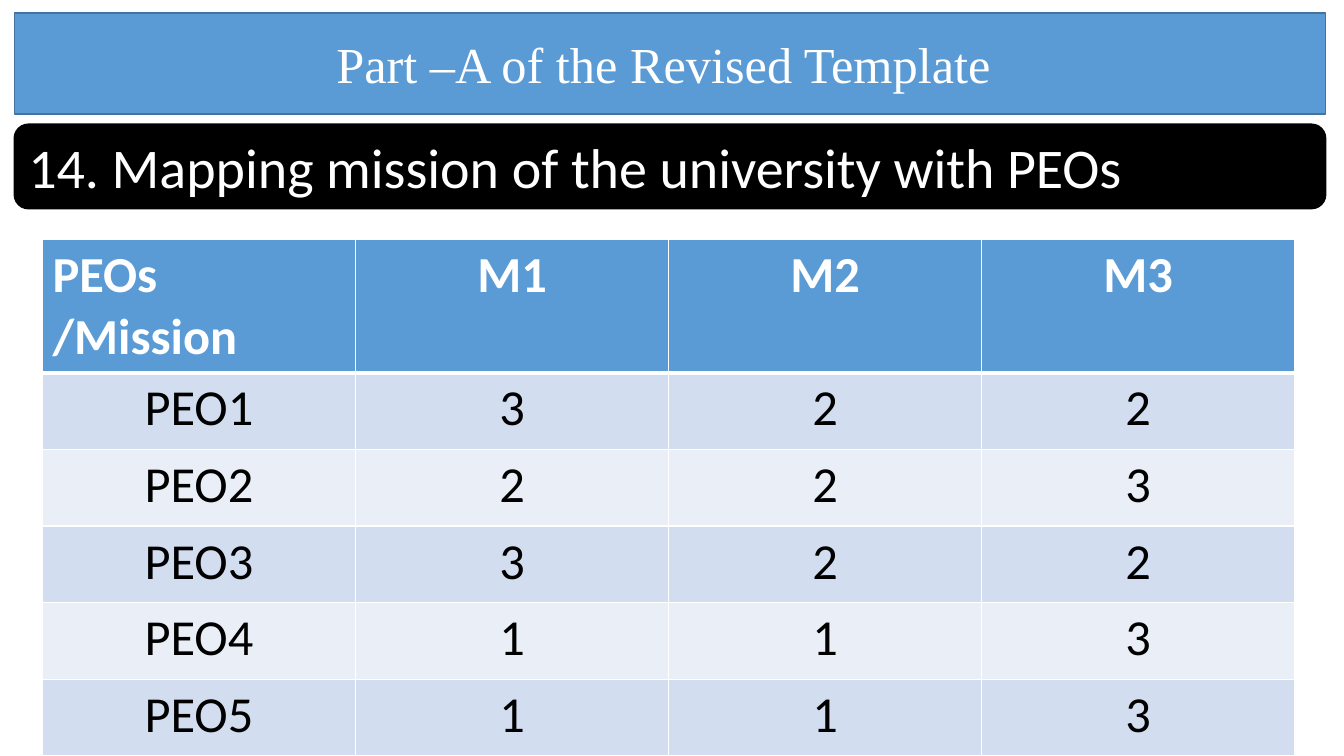
import pptx
import pptx.util
import pptx.dml.color
import pptx.enum.shapes
import pptx.enum.text
import pptx.oxml
import pptx.oxml.ns

Cm, Pt = pptx.util.Cm, pptx.util.Pt
RGB = pptx.dml.color.RGBColor
ALIGN = pptx.enum.text.PP_ALIGN

# Content
TITLE = "Part –A of the Revised Template "
TOPIC = "14. Mapping mission of the university with PEOs"
ROWS = [
    ("PEOs /Mission", "M1", "M2", "M3"),
    ("PEO1", "3", "2", "2"),
    ("PEO2", "2", "2", "3"),
    ("PEO3", "3", "2", "2"),
    ("PEO4", "1", "1", "3"),
    ("PEO5", "1", "1", "3"),
]

# Colours
BLUE = RGB(0x5B, 0x9B, 0xD5)
EDGE = RGB(0x43, 0x73, 0x9E)
BLACK = RGB(0, 0, 0)
WHITE = RGB(255, 255, 255)
BANDS = [RGB(0xEA, 0xEF, 0xF7), RGB(0xD2, 0xDE, 0xEF)]

# Layout
LEFT, WIDE = Cm(0.36), Cm(33.05)
HEAD, ROW, COL = Cm(3.1), Cm(1.93), Cm(7.89)


def place(shape, top, height):
    shape.left, shape.top = LEFT, top
    shape.width, shape.height = WIDE, height


def style(para, size, font, color, align, bold=False):
    para.alignment = align
    para.font.size = Pt(size)
    para.font.name = font
    para.font.color.rgb = color
    para.font.bold = bold


def paint(shape, fill, line, text, size, font, align):
    shape.fill.solid()
    shape.fill.fore_color.rgb = fill
    shape.line.color.rgb = line
    shape.line.width = Pt(1)
    frame = shape.text_frame
    frame.text = text
    frame.word_wrap = True
    frame.auto_size = pptx.enum.text.MSO_AUTO_SIZE.NONE
    frame.vertical_anchor = pptx.enum.text.MSO_ANCHOR.MIDDLE
    style(frame.paragraphs[0], size, font, WHITE, align)


def border(cell, side, width):
    cell._tc.get_or_add_tcPr().append(pptx.oxml.parse_xml(
        f'<a:ln{side} {pptx.oxml.ns.nsdecls("a")} w="{Pt(width)}">'
        f'<a:solidFill><a:srgbClr val="{WHITE}"/></a:solidFill></a:ln{side}>'))


def main():
    deck = pptx.Presentation()
    deck.slide_width, deck.slide_height = Cm(33.87), Cm(19.05)
    slide = deck.slides.add_slide(deck.slide_layouts[5])

    # Title bar, with rounded corners
    title = slide.shapes.title
    place(title, Cm(0.33), Cm(2.54))
    title.element.spPr.append(pptx.oxml.parse_xml(
        f'<a:prstGeom {pptx.oxml.ns.nsdecls("a")} prst="roundRect"><a:avLst/></a:prstGeom>'))
    paint(title, BLUE, EDGE, TITLE, 36, "Times New Roman", ALIGN.CENTER)

    # Topic bar
    topic = slide.shapes.add_shape(
        pptx.enum.shapes.MSO_SHAPE.ROUNDED_RECTANGLE, LEFT, Cm(3.13), WIDE, Cm(2.13))
    topic.shadow.inherit = False
    paint(topic, BLACK, BLACK, TOPIC, 40, "Calibri", ALIGN.LEFT)

    # Mapping table
    rows, cols = len(ROWS), len(ROWS[0])
    table = slide.shapes.add_table(
        rows, cols, Cm(1.07), Cm(6.03), COL * cols, HEAD + ROW * (rows - 1)).table
    for col in table.columns:
        col.width = COL
    for r, texts in enumerate(ROWS):
        table.rows[r].height = ROW if r else HEAD
        for c, text in enumerate(texts):
            cell = table.cell(r, c)
            cell.text = text
            corner = r == c == 0
            style(cell.text_frame.paragraphs[0], 36, "Calibri",
                  BLACK if r else WHITE,
                  ALIGN.LEFT if corner else ALIGN.CENTER, r == 0)
            # The rule under the header is thicker
            for side in "LRTB":
                border(cell, side, 3 if (r, side) in [(0, "B"), (1, "T")] else 1)
            cell.fill.solid()
            cell.fill.fore_color.rgb = BANDS[r % 2] if r else BLUE

    deck.save("out.pptx")


if __name__ == "__main__":
    main()
